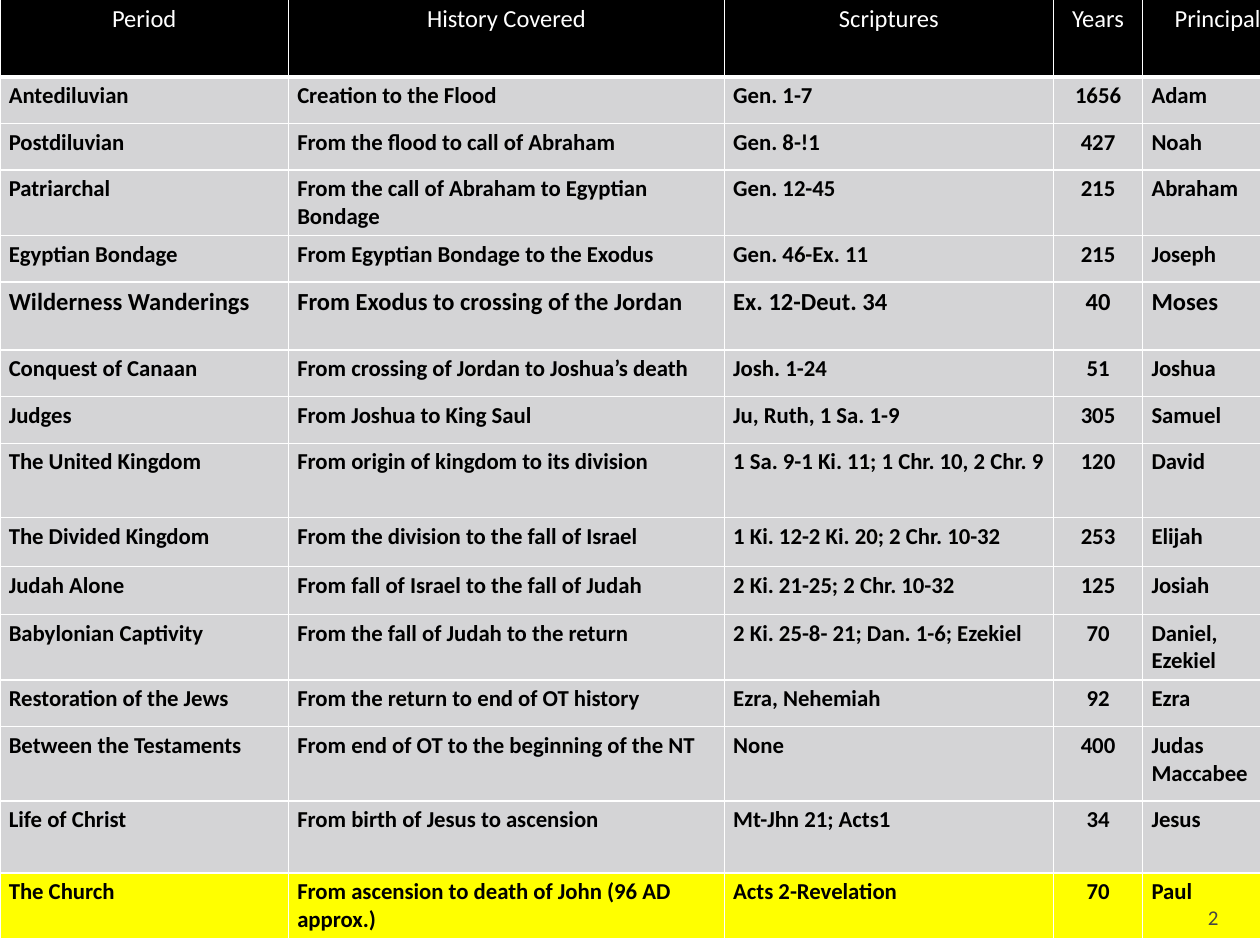
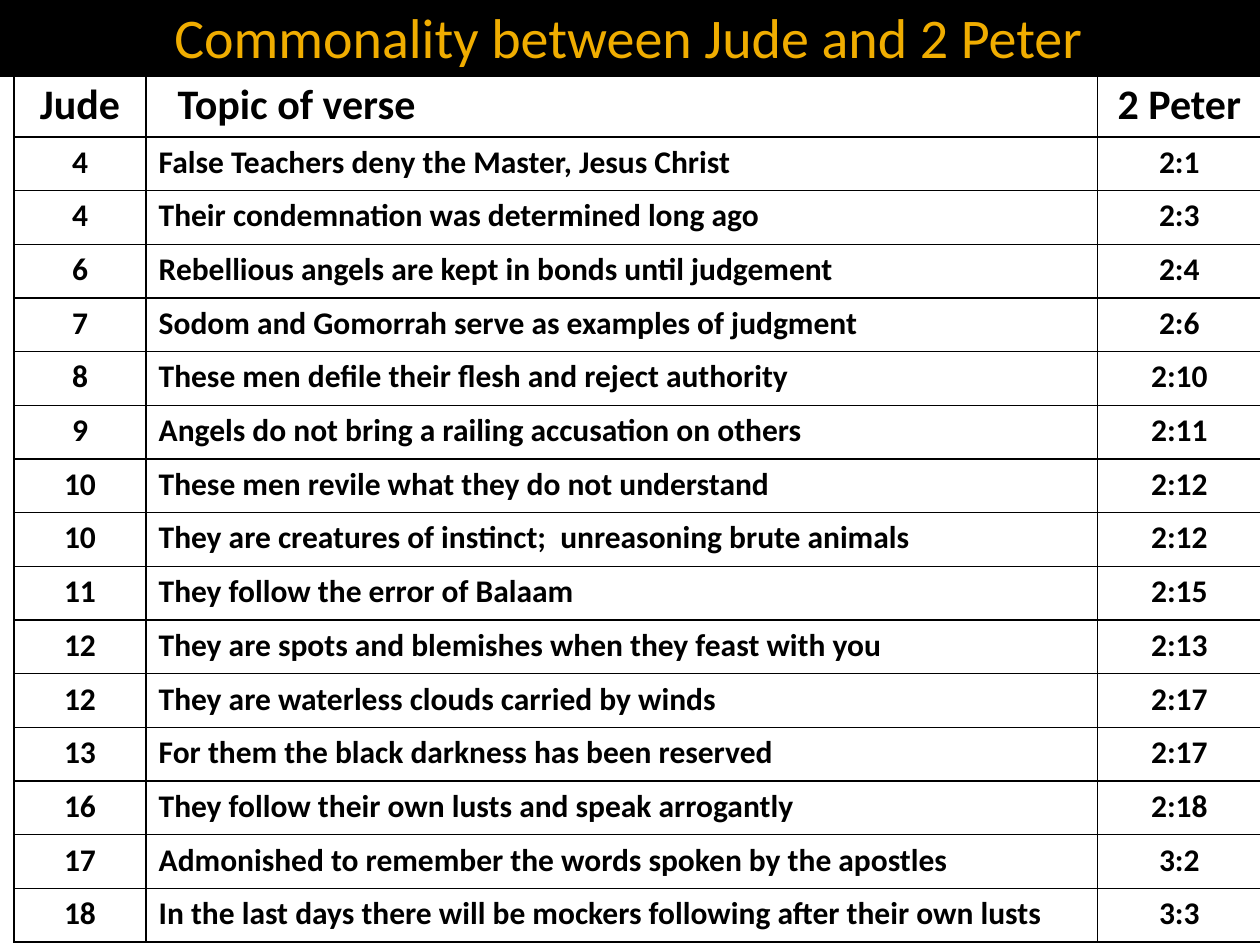
import pptx
import pptx.dml.color
import pptx.enum.text
import pptx.oxml
import pptx.oxml.ns
import pptx.util
from pptx.util import Inches

BLACK = pptx.dml.color.RGBColor(0x00, 0x00, 0x00)
WHITE = pptx.dml.color.RGBColor(0xFF, 0xFF, 0xFF)
GRAY = pptx.dml.color.RGBColor(0xD4, 0xD4, 0xD6)
YELLOW = pptx.dml.color.RGBColor(0xFF, 0xFF, 0x00)
GOLD = pptx.dml.color.RGBColor(0xF0, 0xAD, 0x00)
CHARCOAL = pptx.dml.color.RGBColor(0x45, 0x45, 0x45)

LEFT = pptx.enum.text.PP_ALIGN.LEFT
CENTER = pptx.enum.text.PP_ALIGN.CENTER
RIGHT = pptx.enum.text.PP_ALIGN.RIGHT
MIDDLE = pptx.enum.text.MSO_ANCHOR.MIDDLE
BOTTOM = pptx.enum.text.MSO_ANCHOR.BOTTOM

TITLE_ONLY, BLANK = 5, 6

PERIOD_HEADINGS = ("Period", "History Covered", "Scriptures", "Years", "Principal")
PERIODS = [
    (0.37, "Antediluvian", "Creation to the Flood", "Gen. 1-7", "1656", "Adam"),
    (0.37, "Postdiluvian", "From the flood to call of Abraham", "Gen. 8-!1", "427", "Noah"),
    (0.51, "Patriarchal", "From the call of Abraham to Egyptian Bondage", "Gen. 12-45", "215", "Abraham"),
    (0.37, "Egyptian Bondage", "From Egyptian Bondage to the Exodus", "Gen. 46-Ex. 11", "215", "Joseph"),
    (0.54, "Wilderness Wanderings", "From Exodus to crossing of the Jordan", "Ex. 12-Deut. 34", "40", "Moses"),
    (0.37, "Conquest of Canaan", "From crossing of Jordan to Joshua’s death", "Josh. 1-24", "51", "Joshua"),
    (0.37, "Judges", "From Joshua to King Saul", "Ju, Ruth, 1 Sa. 1-9", "305", "Samuel"),
    (0.59, "The United Kingdom", "From origin of kingdom to its division",
     "1 Sa. 9-1 Ki. 11; 1 Chr. 10, 2 Chr. 9", "120", "David"),
    (0.39, "The Divided Kingdom", "From the division to the fall of Israel",
     "1 Ki. 12-2 Ki. 20; 2 Chr. 10-32", "253", "Elijah"),
    (0.38, "Judah Alone", "From fall of Israel to the fall of Judah", "2 Ki. 21-25; 2 Chr. 10-32", "125", "Josiah"),
    (0.51, "Babylonian Captivity", "From the fall of Judah to the return",
     "2 Ki. 25-8- 21; Dan. 1-6; Ezekiel", "70", "Daniel, Ezekiel"),
    (0.37, "Restoration of the Jews", "From the return to end of OT history", "Ezra, Nehemiah", "92", "Ezra"),
    (0.59, "Between the Testaments", "From end of OT to the beginning of the NT", "None", "400", "Judas Maccabee"),
    (0.57, "Life of Christ", "From birth of Jesus to ascension", "Mt-Jhn 21; Acts1", "34", "Jesus"),
    (0.51, "The Church", "From ascension to death of John (96 AD approx.)", "Acts 2-Revelation", "70", "Paul"),
]

VERSE_HEADINGS = ("Jude", "Topic of verse", "2 Peter")
VERSES = [
    ("4", "False Teachers deny the Master, Jesus Christ", "2:1"),
    ("4", "Their condemnation was determined long ago", "2:3"),
    ("6", "Rebellious angels are kept in bonds until judgement", "2:4"),
    ("7", "Sodom and Gomorrah serve as examples of judgment", "2:6"),
    ("8", "These men defile their flesh and reject authority", "2:10"),
    ("9", "Angels do not bring a railing accusation on others", "2:11"),
    ("10", "These men revile what they do not understand", "2:12"),
    ("10", "They are creatures of instinct;  unreasoning brute animals", "2:12"),
    ("11", "They follow the error of Balaam", "2:15"),
    ("12", "They are spots and blemishes when they feast with you", "2:13"),
    ("12", "They are waterless clouds carried by winds", "2:17"),
    ("13", "For them the black darkness has been reserved", "2:17"),
    ("16", "They follow their own lusts and speak arrogantly", "2:18"),
    ("17", "Admonished to remember the words spoken by the apostles", "3:2"),
    ("18", "In the last days there will be mockers following after their own lusts", "3:3"),
]


class SlideBuilder:
    font_name = "Calibri"

    def __init__(self, deck):
        self.deck = deck
        self.slide = None

    def add_slide(self, layout):
        self.slide = self.deck.slides.add_slide(self.deck.slide_layouts[layout])

    def add_text(self, frame, text, size, color=BLACK, bold=False, align=LEFT):
        para = frame.paragraphs[0]
        para.alignment = align
        span = para.add_run()
        span.text = text
        span.font.name = self.font_name
        span.font.size = pptx.util.Pt(size)
        span.font.bold = bold
        span.font.color.rgb = color

    def title(self, text):
        band = self.slide.shapes.title
        band.left, band.top = Inches(-0.02), Inches(-0.03)
        band.width, band.height = Inches(10.02), Inches(0.64)
        band.fill.solid()
        band.fill.fore_color.rgb = BLACK
        frame = band.text_frame
        frame.vertical_anchor = MIDDLE
        frame.auto_size = pptx.enum.text.MSO_AUTO_SIZE.NONE
        self.add_text(frame, text, 32, GOLD, align=CENTER)

    def page_number(self, text):
        box = self.slide.shapes.add_textbox(Inches(8.97), Inches(7.08), Inches(0.8), Inches(0.3))
        frame = box.text_frame
        frame.word_wrap = True
        frame.vertical_anchor = BOTTOM
        frame.margin_bottom = 0
        self.add_text(frame, text, 12, CHARCOAL, align=RIGHT)

    def table(self, left, top, widths, heights):
        frame = self.slide.shapes.add_table(
            len(heights), len(widths), Inches(left), Inches(top),
            Inches(sum(widths)), Inches(sum(heights)))
        table = frame.table
        table.first_row = table.horz_banding = False
        for column, width in zip(table.columns, widths):
            column.width = Inches(width)
        for row, height in zip(table.rows, heights):
            row.height = Inches(height)
        return table

    def borders(self, cell, color, top=1, bottom=1):
        properties = cell._tc.get_or_add_tcPr()
        for side, width in (("L", 1), ("R", 1), ("T", top), ("B", bottom)):
            properties.append(pptx.oxml.parse_xml(
                f'<a:ln{side} {pptx.oxml.ns.nsdecls("a")} w="{pptx.util.Pt(width)}">'
                f'<a:solidFill><a:srgbClr val="{color}"/></a:solidFill></a:ln{side}>'))

    def fill(self, cell, color):
        if color is None:
            cell.fill.background()
        else:
            cell.fill.solid()
            cell.fill.fore_color.rgb = color


def add_periods_slide(builder):
    builder.add_slide(BLANK)
    heights = [0.62] + [period[0] for period in PERIODS]
    table = builder.table(0, -0.01, (2.29, 3.46, 2.61, 0.71, 1.19), heights)
    rows = [PERIOD_HEADINGS] + [period[1:] for period in PERIODS]
    for row_index, texts in enumerate(rows):
        heading = row_index == 0
        size = 14 if heading or texts[0] == "Wilderness Wanderings" else 13
        background = BLACK if heading else YELLOW if texts[0] == "The Church" else GRAY
        for column_index, text in enumerate(texts):
            cell = table.cell(row_index, column_index)
            cell.margin_left = cell.margin_right = Inches(0.07)
            cell.margin_top = cell.margin_bottom = Inches(0.04)
            builder.borders(cell, WHITE, top=3 if row_index == 1 else 1, bottom=3 if heading else 1)
            builder.fill(cell, background)
            align = CENTER if heading or column_index == 3 else LEFT
            builder.add_text(cell.text_frame, text, size, WHITE if heading else BLACK, not heading, align)
    builder.page_number("2")


def add_verses_slide(builder):
    builder.add_slide(TITLE_ONLY)
    builder.title("Commonality between Jude and 2 Peter")
    heights = [0.5] + [6.39 / len(VERSES)] * len(VERSES)
    table = builder.table(0.11, 0.58, (1.05, 7.55, 1.3), heights)
    for row_index, texts in enumerate([VERSE_HEADINGS] + VERSES):
        size = 18 if row_index else 24
        for column_index, text in enumerate(texts):
            cell = table.cell(row_index, column_index)
            builder.borders(cell, BLACK)
            builder.fill(cell, None)
            align = LEFT if column_index == 1 else CENTER
            builder.add_text(cell.text_frame, text, size, bold=True, align=align)
    table.cell(0, 1).margin_left = Inches(0.25)


def main():
    deck = pptx.Presentation()
    deck.slide_width, deck.slide_height = Inches(10), Inches(7.5)
    builder = SlideBuilder(deck)
    add_periods_slide(builder)
    add_verses_slide(builder)
    deck.save("out.pptx")


if __name__ == "__main__":
    main()
